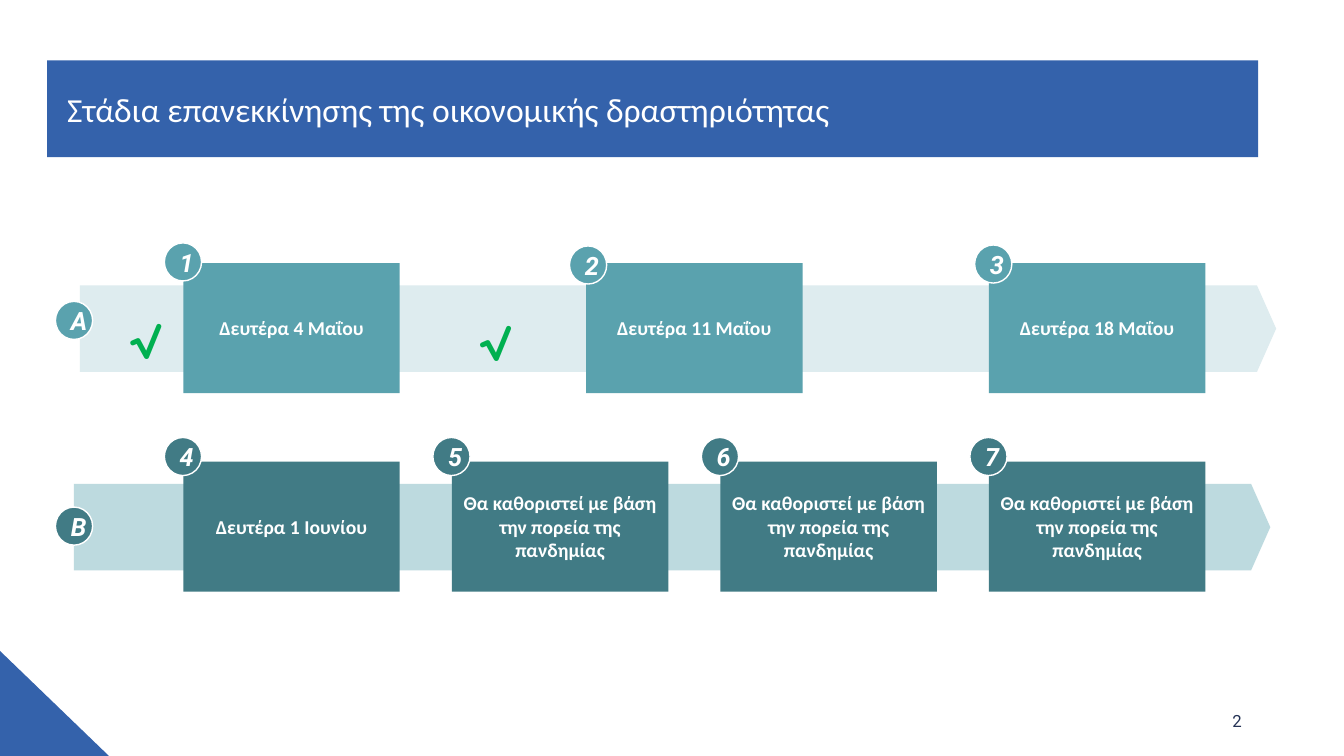
from lxml import etree
from pptx import Presentation
from pptx import util as u
from pptx.dml.color import RGBColor
from pptx.enum import shapes, text
from pptx.oxml.ns import qn

COLOURS = {
    "white": "FFFFFF",
    "blue": "3462AB",
    "navy": "253356",
    "green": "00B050",
    "teal": "5AA2AE",
    "teal_band": "DEECEF",
    "deep_teal": "417B85",
    "deep_teal_band": "BDDADF",
}
PENDING = "Θα καθοριστεί με βάση την πορεία της πανδημίας"
FIRST_BOX_LEFT, BOX_WIDTH, BOX_HEIGHT = 131, 154.6, 92.9
FIRST_BADGE_LEFT = 117.4
BOX_SPAN = 575.4  # from the first box to the last in each row

ROWS = [
    dict(letter="B", letter_top=362.2, band=(52.8, 345.6), box_top=329.7,
         colour="deep_teal", first_number=4, badge_step=191.8,
         badge_tops=[312.5] * 4,
         labels=["Δευτέρα 1 Ιουνίου"] + [PENDING] * 3),
    dict(letter="A", letter_top=215.3, band=(57, 203.8), box_top=187.9,
         colour="teal", first_number=1, badge_step=289.4,
         badge_tops=[173.5, 175.7, 175],
         labels=["Δευτέρα 4 Μαΐου", "Δευτέρα 11 Μαΐου", "Δευτέρα 18 Μαΐου"]),
]


def rgb(name):
    return RGBColor.from_string(COLOURS[name])


class StageSlide:
    def __init__(self, slide):
        self.slide = slide

    def set_text(self, shape, words, size, font="Calibri", colour="white",
                 align=text.PP_ALIGN.CENTER, anchor=text.MSO_ANCHOR.MIDDLE,
                 insets=None, space_after=0, bold=False, italic=False):
        """Put one formatted paragraph in a shape; insets are (sides, top and bottom)."""
        frame = shape.text_frame
        frame.text = words
        frame.word_wrap = True
        frame.auto_size = text.MSO_AUTO_SIZE.NONE
        frame.vertical_anchor = anchor
        if insets:
            frame.margin_left = frame.margin_right = u.Pt(insets[0])
            frame.margin_top = frame.margin_bottom = u.Pt(insets[1])
        paragraph = frame.paragraphs[0]
        paragraph.alignment = align
        paragraph.space_after = u.Pt(space_after)
        run_font = paragraph.runs[0].font
        run_font.name, run_font.size = font, u.Pt(size)
        run_font.bold, run_font.italic = bold, italic
        run_font.color.rgb = rgb(colour)

    def shape(self, kind, left, top, width, height, colour):
        shape = self.slide.shapes.add_shape(
            kind, u.Pt(left), u.Pt(top), u.Pt(width), u.Pt(height))
        shape.shadow.inherit = False
        shape.fill.solid()
        shape.fill.fore_color.rgb = rgb(colour)
        shape.line.fill.background()
        return shape

    def title(self, words):
        """Turn the title placeholder into a banner with two snipped corners."""
        title = self.slide.shapes.title
        title.left, title.top = u.Pt(33.6), u.Pt(43.2)
        title.width, title.height = u.Pt(865.2), u.Pt(69)
        geometry = etree.SubElement(
            title.element.spPr, qn("a:prstGeom"), prst="snip2DiagRect")
        etree.SubElement(geometry, qn("a:avLst"))
        title.fill.solid()
        title.fill.fore_color.rgb = rgb("blue")
        self.set_text(title, words, 24, align=text.PP_ALIGN.LEFT, insets=(14.4, 1.4))

    def band(self, left, top, colour):
        band = self.shape(shapes.MSO_SHAPE.PENTAGON, left, top, 854.6, 61.9, colour)
        band.adjustments[0] = 0.222

    def box(self, left, top, words, colour):
        box = self.shape(shapes.MSO_SHAPE.RECTANGLE, left, top,
                         BOX_WIDTH, BOX_HEIGHT, colour)
        self.set_text(box, words, 14, insets=(2.9, 2.9), space_after=6, bold=True)

    def badge(self, left, top, words, colour):
        badge = self.shape(shapes.MSO_SHAPE.OVAL, left, top, 26.6, 27.2, colour)
        badge.line.color.rgb = rgb("white")
        badge.line.width = u.Pt(1)
        self.set_text(badge, words, 18, font="Roboto", bold=True, italic=True)

    def label(self, left, top, width, height, words, size, **style):
        label = self.slide.shapes.add_textbox(
            u.Pt(left), u.Pt(top), u.Pt(width), u.Pt(height))
        self.set_text(label, words, size, **style)

    def row(self, row):
        """Draw one timeline row: evenly spaced boxes, badges and the row letter."""
        colour = row["colour"]
        box_step = BOX_SPAN / (len(row["labels"]) - 1)
        self.band(*row["band"], colour + "_band")
        for index, words in enumerate(row["labels"]):
            self.box(FIRST_BOX_LEFT + index * box_step, row["box_top"], words, colour)
        for index, top in enumerate(row["badge_tops"]):
            self.badge(FIRST_BADGE_LEFT + index * row["badge_step"], top,
                       str(row["first_number"] + index), colour)
        self.badge(39.6, row["letter_top"], row["letter"], colour)


def main():
    presentation = Presentation()
    presentation.slide_width, presentation.slide_height = u.Pt(960), u.Pt(540)
    stages = StageSlide(presentation.slides.add_slide(presentation.slide_layouts[5]))

    stages.title("Στάδια επανεκκίνησης της οικονομικής δραστηριότητας")
    stages.shape(shapes.MSO_SHAPE.RIGHT_TRIANGLE, 0, 465, 77.8, 75, "blue")
    for row in ROWS:
        stages.row(row)
    for left, top in [(84.2, 217.4), (334.1, 218.9)]:
        stages.label(left, top, 49.7, 51.1, "√", 36, font="Quicksand",
                     colour="green", align=text.PP_ALIGN.LEFT,
                     anchor=text.MSO_ANCHOR.TOP, bold=True)
    stages.label(678.2, 500.4, 216, 28.8, "2", 12, font="Roboto",
                 colour="navy", align=text.PP_ALIGN.RIGHT)

    presentation.save("out.pptx")


if __name__ == "__main__":
    main()
